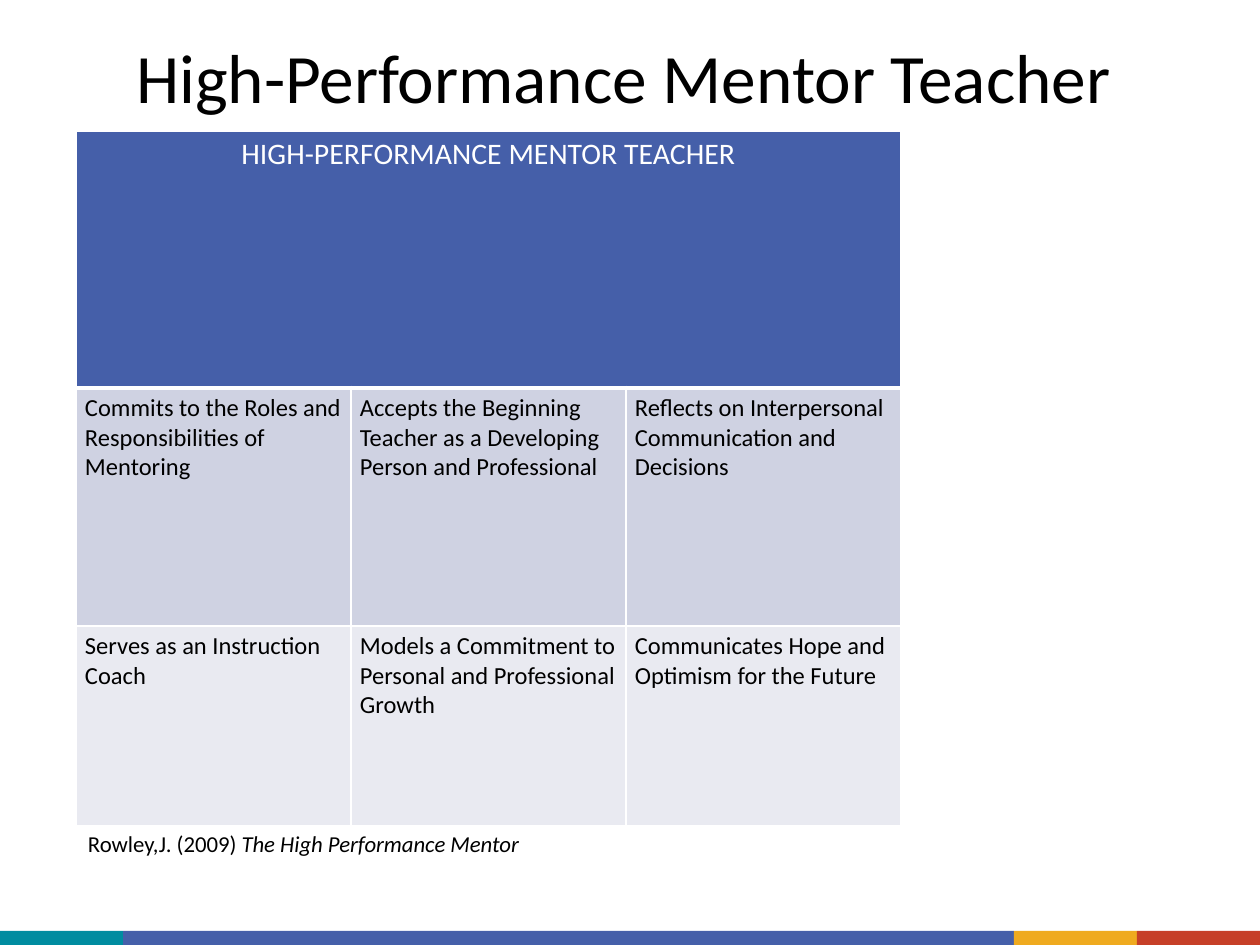
import pptx
import pptx.dml.color
import pptx.enum.shapes
import pptx.enum.text
import pptx.oxml
import pptx.oxml.ns
import pptx.util

RGBColor = pptx.dml.color.RGBColor
PP_ALIGN = pptx.enum.text.PP_ALIGN

WHITE = RGBColor(0xFF, 0xFF, 0xFF)
BLACK = RGBColor(0x00, 0x00, 0x00)
TEAL = RGBColor(0x00, 0x8C, 0xA0)
BLUE = RGBColor(0x45, 0x5F, 0xA9)
AMBER = RGBColor(0xEF, 0xAA, 0x1F)
RED = RGBColor(0xC6, 0x3F, 0x28)
DARK_BAND = RGBColor(0xCF, 0xD2, 0xE2)
LIGHT_BAND = RGBColor(0xE9, 0xEA, 0xF1)
FONT = "Calibri"

# Content
TITLE = "High-Performance Mentor Teacher"
HEADING = "HIGH-PERFORMANCE MENTOR TEACHER"
QUALITIES = [
    ["Commits to the Roles and Responsibilities of Mentoring",
     "Accepts the Beginning Teacher as a Developing Person and Professional",
     "Reflects on Interpersonal Communication and Decisions"],
    ["Serves as an Instruction Coach",
     "Models a Commitment to Personal and Professional Growth",
     "Communicates Hope and Optimism for the Future"],
]
CITATION = [("Rowley,J. (2009) ", False), ("The High Performance Mentor", True)]

# Rows: texts, fill, text colour, size, side margin, bottom border width
ROWS = [
    ([HEADING], BLUE, WHITE, 17, 12, 3),
    (QUALITIES[0], DARK_BAND, BLACK, 14, 9, 1),
    (QUALITIES[1], LIGHT_BAND, BLACK, 14, 9, 1),
    ([""], WHITE, BLACK, 13, 12, 1),
]
ROW_HEIGHTS = [257, 238, 200, 50]
COLUMN_WIDTH, COLUMN_COUNT = 275, 3
FOOTER_BANDS = [(TEAL, 123), (BLUE, 891), (AMBER, 123), (RED, 123)]


def px(value):
    return pptx.util.Emu(round(value * 914400 / 126))


def format_run(run, size, color, italic=None):
    run.font.name = FONT
    run.font.size = pptx.util.Pt(size)
    run.font.color.rgb = color
    run.font.bold = False
    run.font.italic = italic


def add_borders(cell, bottom_width):
    properties = cell._tc.get_or_add_tcPr()
    for side, width in (("L", 1), ("R", 1), ("T", 1), ("B", bottom_width)):
        properties.append(pptx.oxml.parse_xml(
            f'<a:ln{side} {pptx.oxml.ns.nsdecls("a")} w="{pptx.util.Pt(width)}">'
            f'<a:solidFill><a:srgbClr val="{WHITE}"/></a:solidFill></a:ln{side}>'))


presentation = pptx.Presentation()
presentation.slide_width, presentation.slide_height = px(1260), px(945)
slide = presentation.slides.add_slide(presentation.slide_layouts[6])

# Footer bands
left = 0
for color, width in FOOTER_BANDS:
    band = slide.shapes.add_shape(
        pptx.enum.shapes.MSO_SHAPE.RECTANGLE, px(left), px(931), px(width), px(14))
    band.shadow.inherit = False
    band.fill.solid()
    band.fill.fore_color.rgb = color
    band.line.fill.background()
    left += width

# Title
title_frame = slide.shapes.add_textbox(px(123), px(38), px(1017), px(93)).text_frame
title_frame.word_wrap = True
title_frame.vertical_anchor = pptx.enum.text.MSO_ANCHOR.BOTTOM
title_frame.margin_left = title_frame.margin_right = px(13)
title_frame.margin_top = title_frame.margin_bottom = px(13)
title_frame.text = TITLE
title_frame.paragraphs[0].line_spacing = 0.9
format_run(title_frame.paragraphs[0].runs[0], 39.6, BLACK)

# Table of mentor qualities
table = slide.shapes.add_table(
    len(ROWS), COLUMN_COUNT, px(76), px(131),
    px(COLUMN_WIDTH * COLUMN_COUNT), px(sum(ROW_HEIGHTS))).table
table.first_row = table.horz_banding = False
for column in table.columns:
    column.width = px(COLUMN_WIDTH)

for row_index, (texts, fill, color, size, margin, bottom_width) in enumerate(ROWS):
    table.rows[row_index].height = px(ROW_HEIGHTS[row_index])
    for column_index in range(COLUMN_COUNT):
        cell = table.cell(row_index, column_index)
        add_borders(cell, bottom_width)
        cell.fill.solid()
        cell.fill.fore_color.rgb = fill
        cell.margin_left = cell.margin_right = px(margin)
        cell.margin_top = cell.margin_bottom = px(5)
    if len(texts) == 1:
        table.cell(row_index, 0).merge(table.cell(row_index, COLUMN_COUNT - 1))
    for column_index, text in enumerate(texts):
        paragraph = table.cell(row_index, column_index).text_frame.paragraphs[0]
        paragraph.text = text
        for run in paragraph.runs:
            format_run(run, size, color)

table.cell(0, 0).text_frame.paragraphs[0].alignment = PP_ALIGN.CENTER

# Citation in the last row
citation = table.cell(len(ROWS) - 1, 0).text_frame.paragraphs[0]
for text, italic in CITATION:
    run = citation.add_run()
    run.text = text
    format_run(run, 13, BLACK, italic)

presentation.save("out.pptx")
